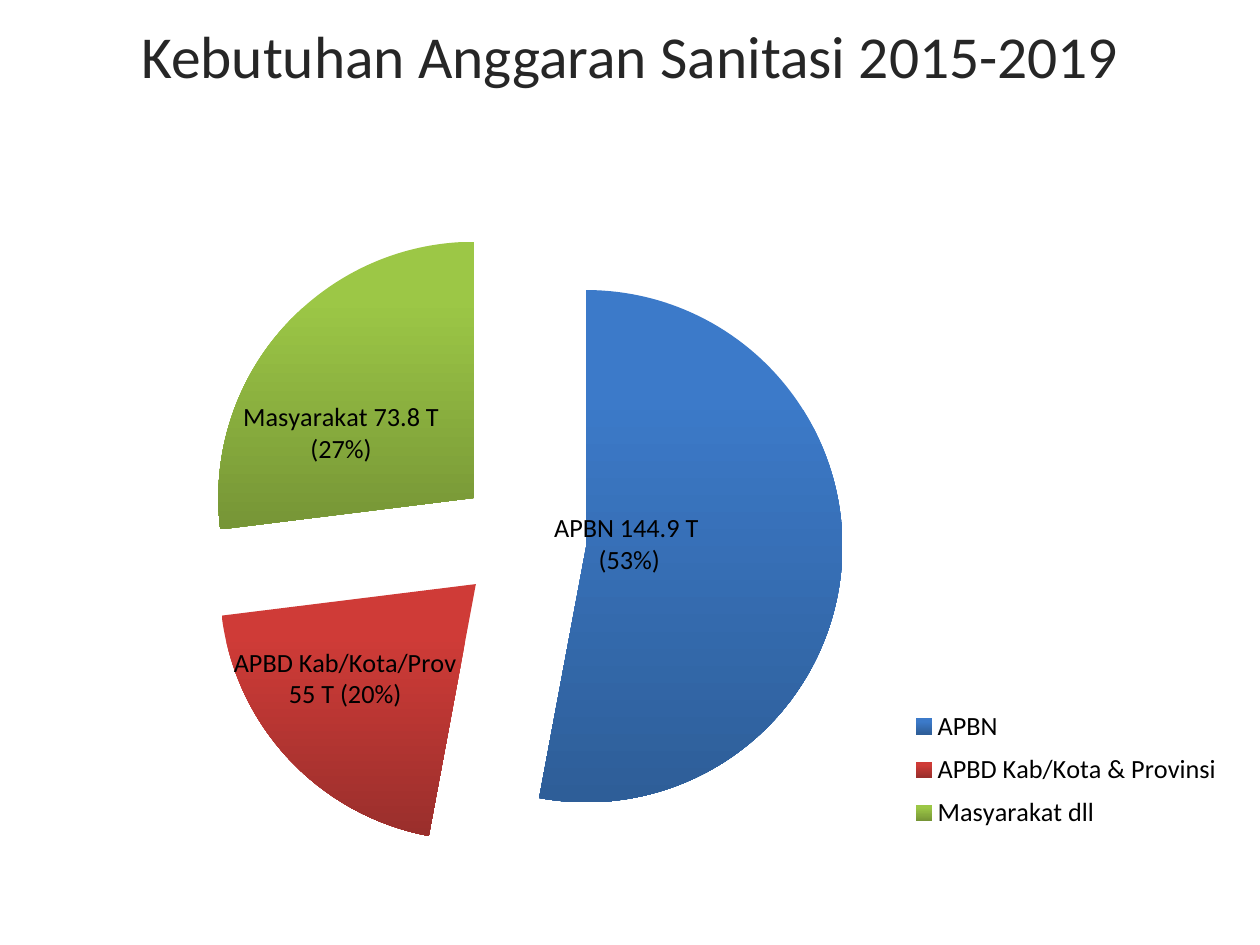
"""Build the sanitation budget slide with its exploded pie chart."""
from lxml import etree
from pptx import Presentation
from pptx.chart.data import CategoryChartData
from pptx.dml.color import RGBColor
from pptx.enum import chart as ce, text as te
from pptx.oxml.ns import qn
from pptx.util import Inches, Pt

FONT = "Calibri"
HEX = {"title": "262626", "text": "000000"}
TITLE = "Kebutuhan Anggaran Sanitasi 2015-2019"
PARTS = [
    {"name": "APBN", "value": 144.9, "label": "APBN 144.9 T\n (53%)",
     "shift": (-0.07, -0.02), "fade": ("3C7AC9", "2E5E98")},
    {"name": "APBD Kab/Kota & Provinsi", "value": 55,
     "label": "APBD Kab/Kota/Prov\n55 T (20%)",
     "shift": (-0.03, 0.01), "fade": ("CF3B37", "9A2F2C")},
    {"name": "Masyarakat dll", "value": 73.8,
     "label": "Masyarakat 73.8 T (27%)",
     "shift": (-0.03, 0.03), "fade": ("9CC746", "769536")},
]


def style(font, size, color):
    font.name, font.size = FONT, Pt(size)
    font.color.rgb = RGBColor.from_string(HEX[color])


def write(frame, text, size=15, color="text", align=te.PP_ALIGN.CENTER):
    frame.text = text
    for para in frame.paragraphs:
        para.alignment = align
        for run in para.runs:
            style(run.font, size, color)


def place(parent, index, **values):
    for old in parent.findall(qn("c:layout")):
        parent.remove(old)
    layout = etree.Element(qn("c:layout"))
    manual = etree.SubElement(layout, qn("c:manualLayout"))
    for key, value in values.items():
        etree.SubElement(manual, qn("c:" + key)).set("val", str(value))
    parent.insert(index, layout)


def draw(slide):
    data = CategoryChartData(number_format="0.0")
    data.categories = [part["name"] for part in PARTS]
    data.add_series("Series 1", [part["value"] for part in PARTS])
    chart = slide.shapes.add_chart(
        ce.XL_CHART_TYPE.PIE, Inches(0.08), Inches(1.48),
        Inches(9.92), Inches(5.35), data).chart
    style(chart.font, 10, "text")
    chart.has_title = False
    chart.has_legend = True
    legend = chart.legend
    legend.position = ce.XL_LEGEND_POSITION.RIGHT
    legend.include_in_layout = False
    style(legend.font, 15, "text")
    place(legend._element, 1, xMode="edge", yMode="edge",
          x=0.71, y=0.76, w=0.27, h=0.21)
    area = chart._chartSpace.find(".//" + qn("c:plotArea"))
    place(area, 0, layoutTarget="inner", xMode="edge", yMode="edge",
          x=0.03, y=0.05, w=0.76, h=0.95)

    plot = chart.plots[0]
    plot.vary_by_categories = True
    series = plot.series[0]
    burst = etree.Element(qn("c:explosion"), val="25")
    series._element.find(qn("c:tx")).addnext(burst)
    labels = series.data_labels
    labels.show_value = True
    labels.position = ce.XL_LABEL_POSITION.CENTER
    style(labels.font, 15, "text")
    for i, part in enumerate(PARTS):
        point = series.points[i]
        fill = point.format.fill
        fill.gradient()
        fill.gradient_angle = 270
        for stop, color in zip(fill.gradient_stops, part["fade"]):
            stop.color.rgb = RGBColor.from_string(color)
        fill.gradient_stops[0].position = 0.2
        point.format.line.fill.background()
        label = point.data_label
        write(label.text_frame, part["label"])
        label.position = ce.XL_LABEL_POSITION.CENTER
        x, y = part["shift"]
        place(label._dLbl, 1, x=x, y=y)


def main():
    deck = Presentation()
    deck.slide_width, deck.slide_height = Inches(10), Inches(7.5)
    slide = deck.slides.add_slide(deck.slide_layouts[5])
    title = slide.shapes.title
    title.left, title.top = Inches(0.5), Inches(0)
    title.width, title.height = Inches(9), Inches(0.87)
    title.text_frame.vertical_anchor = te.MSO_ANCHOR.MIDDLE
    write(title.text_frame, TITLE, size=34, color="title")
    draw(slide)
    deck.save("out.pptx")


if __name__ == "__main__":
    main()
